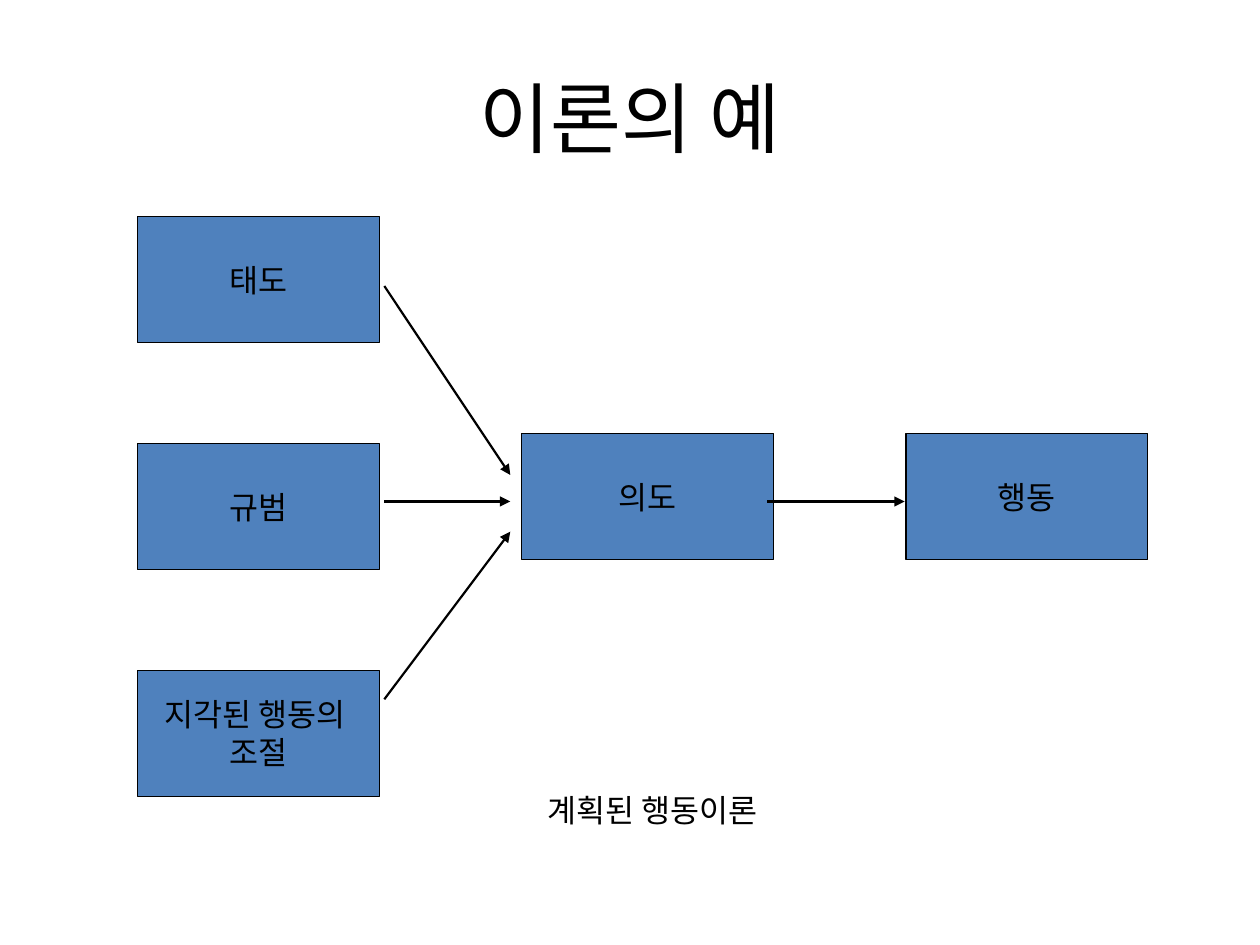
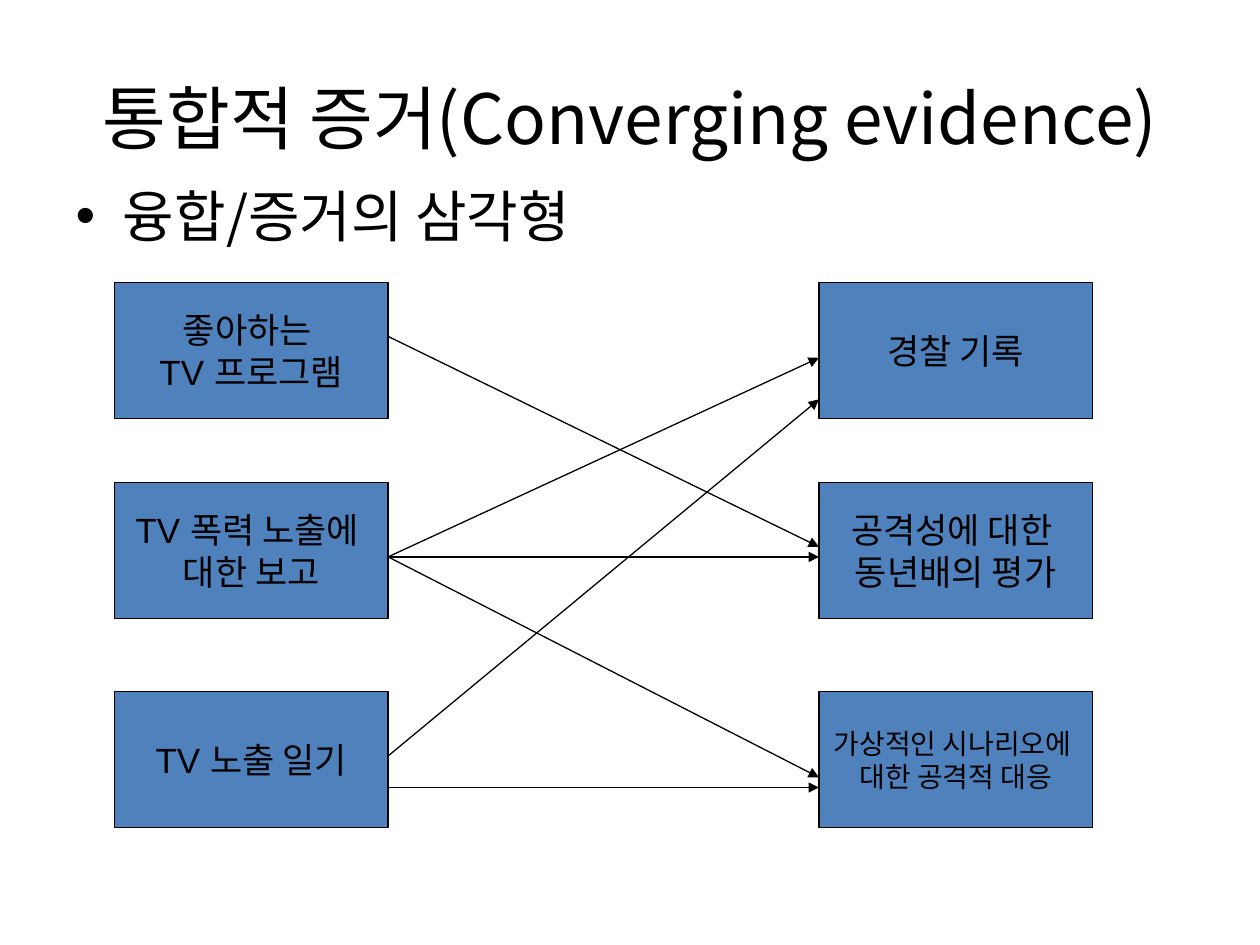
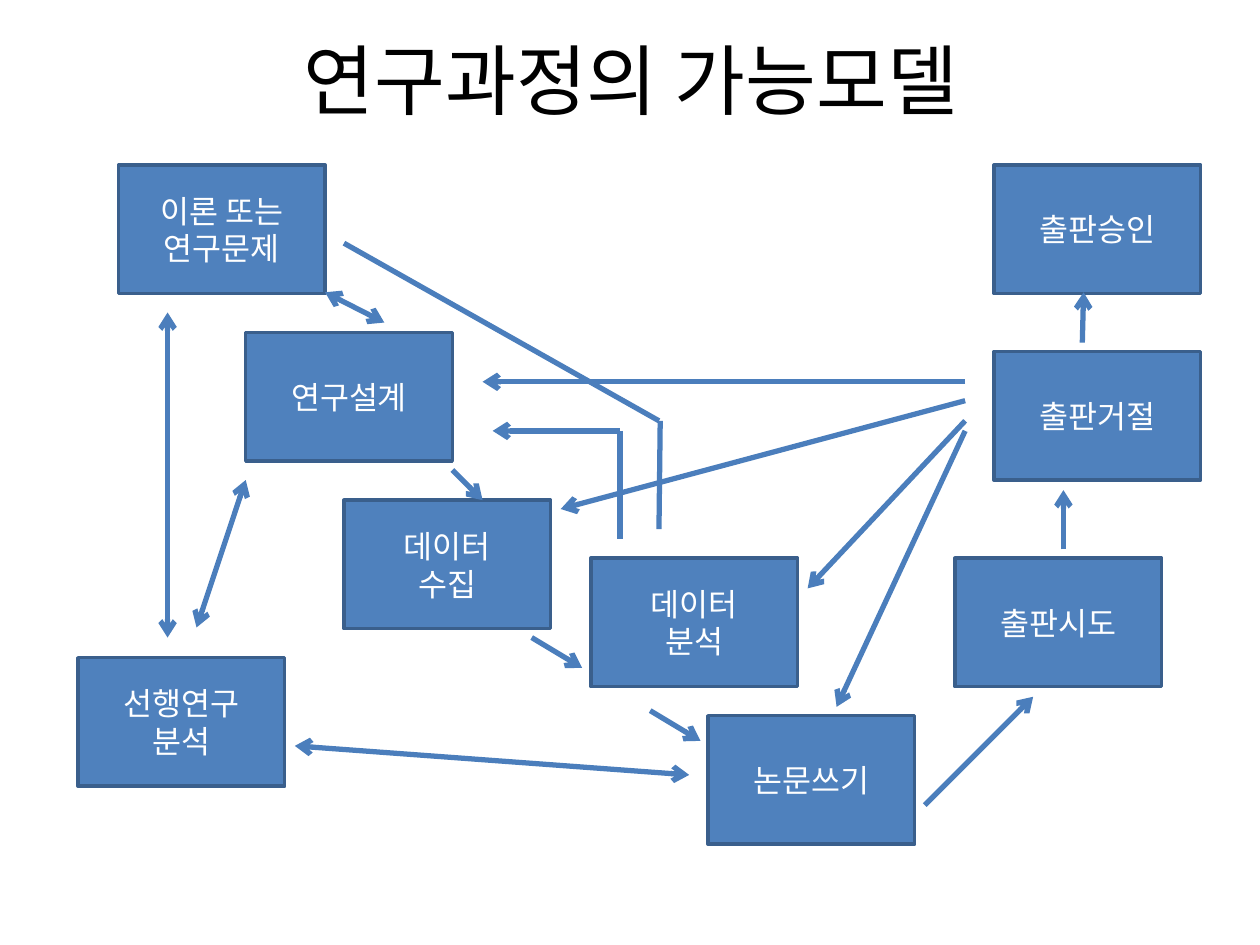
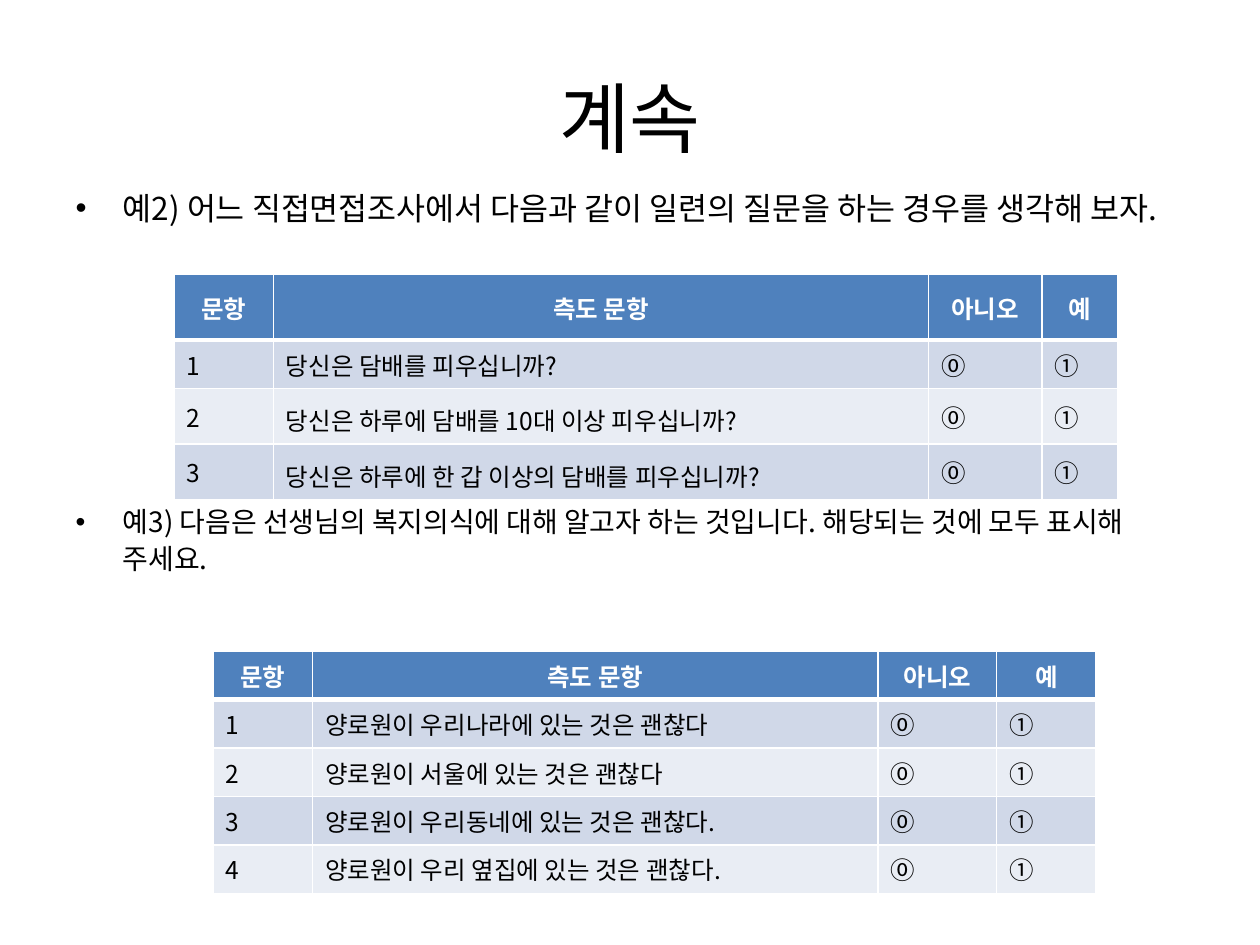
"""Four lecture slides on research theory, evidence, process and scales."""
from lxml import etree
from pptx import Presentation
from pptx.dml.color import RGBColor
from pptx.enum.shapes import MSO_CONNECTOR, MSO_SHAPE
from pptx.enum.text import MSO_ANCHOR, MSO_AUTO_SIZE, PP_ALIGN
from pptx.oxml.ns import qn
from pptx.util import Inches, Pt

CENTER, LEFT = PP_ALIGN.CENTER, PP_ALIGN.LEFT
MIDDLE = MSO_ANCHOR.MIDDLE
RECT, STRAIGHT = MSO_SHAPE.RECTANGLE, MSO_CONNECTOR.STRAIGHT
NO_FIT, GROW = MSO_AUTO_SIZE.NONE, MSO_AUTO_SIZE.SHAPE_TO_FIT_TEXT
TITLE_CONTENT, TITLE_ONLY = 1, 5

FONT = "Noto Sans CJK KR"
COLORS = {
    "black": "000000", "white": "FFFFFF", "blue": "4F81BD",
    "edge": "3A5F8C", "arrow": "4B7EBC", "odd": "D0D8E8", "even": "E9EDF4",
}

THEORY_X, THEORY_W, THEORY_H = 1.09, 1.92, 1
THEORY_CAUSES = ["태도", "규범", "지각된 행동의 \n조절"]
THEORY_TOP, THEORY_STEP = 1.72, 1.8
THEORY_RESULTS = [(4.14, 2, "의도"), (7.19, 1.92, "행동")]
THEORY_RESULT_Y = 3.44
THEORY_ARROWS = [
    (3.05, 5.55, 4.05, 4.22), (3.05, 3.98, 4.05, 3.98),
    (3.05, 2.27, 4.05, 3.77), (6.09, 3.98, 7.18, 3.98),
]

EVIDENCE_W, EVIDENCE_H = 2.17, 1.08
EVIDENCE_LEFT, EVIDENCE_RIGHT = 0.91, 6.5
EVIDENCE_ROWS = [
    (2.24, "좋아하는 \nTV 프로그램", "경찰 기록", 20),
    (3.83, "TV 폭력 노출에 \n대한 보고", "공격성에 대한 \n동년배의 평가", 20),
    (5.49, "TV 노출 일기", "가상적인 시나리오에 \n대한 공격적 대응", 16),
]
EVIDENCE_LINKS = [(4.42, 4.42), (4.42, 2.84), (4.42, 6.17),
                  (2.67, 4.34), (6.25, 6.25), (6, 3.17)]

STEP_W, STEP_H = 1.64, 1.02
STEPS = [
    (0.94, 1.31, "이론 또는 연구문제"), (0.62, 5.22, "선행연구\n분석"),
    (1.95, 2.64, "연구설계"), (2.73, 3.97, "데이터\n수집"),
    (4.69, 4.43, "데이터\n분석"), (5.62, 5.68, "논문쓰기"),
    (7.58, 4.43, "출판시도"), (7.89, 2.79, "출판거절"),
    (7.89, 1.31, "출판승인"),
]
TWO_WAY = [(2.58, 2.32, 3.05, 2.56), (1.33, 2.48, 1.33, 5.06),
           (1.95, 3.81, 1.56, 4.98), (5.47, 6.15, 2.34, 5.92)]
ONE_WAY = [
    (3.59, 3.73, 3.83, 3.97), (4.22, 5.06, 4.62, 5.3),
    (7.66, 3.03, 3.83, 3.03), (7.66, 3.18, 4.45, 4.04),
    (7.66, 3.34, 6.41, 4.67), (7.66, 3.42, 6.64, 5.61),
    (7.34, 6.39, 8.2, 5.53), (8.44, 4.36, 8.44, 3.89),
    (8.59, 2.72, 8.6, 2.32), (4.92, 3.42, 3.91, 3.42),
    (5.16, 5.64, 5.56, 5.88),
]
PLAIN = [(2.73, 1.93, 5.23, 3.34), (5.24, 3.34, 5.23, 4.2),
         (4.92, 3.42, 4.92, 4.28)]

HEADER = ["문항", "측도 문항", "아니오", "예"]
ANSWERS = ["⓪", "①"]
EXAMPLES = [
    ("예2) 어느 직접면접조사에서 다음과 같이 일련의 질문을 하는 경우를 생각해 보자.",
     18, 1.2, None),
    ("예3) 다음은 선생님의 복지의식에 대해 알고자 하는 것입니다. "
     "해당되는 것에 모두 표시해 주세요.", 16, 1.1, 157),
]
SCALES = [
    {"at": (1.38, 2.18), "cols": [0.79, 5.2, 0.9, 0.6],
     "rows": [0.52, 0.3, 0.34, 0.34], "spacing": [1, 1.2, 1.2],
     "questions": ["당신은 담배를 피우십니까?",
                   "당신은 하루에 담배를 10대 이상 피우십니까?",
                   "당신은 하루에 한 갑 이상의 담배를 피우십니까?"]},
    {"at": (1.69, 5.17), "cols": [0.79, 4.49, 0.94, 0.79],
     "rows": [0.36] * 5, "spacing": [1] * 4,
     "questions": ["양로원이 우리나라에 있는 것은 괜찮다",
                   "양로원이 서울에 있는 것은 괜찮다",
                   "양로원이 우리동네에 있는 것은 괜찮다.",
                   "양로원이 우리 옆집에 있는 것은 괜찮다."]},
]


def rgb(name):
    return RGBColor.from_string(COLORS[name])


def format_paragraph(p, size, color="black", align=LEFT, font=FONT, bold=False):
    p.alignment = align
    for r in p.runs:
        r.font.size, r.font.name, r.font.bold = Pt(size), font, bold
        r.font.color.rgb = rgb(color)
        r.font._element.find(qn("a:latin")).addnext(
            r.font._element.makeelement(qn("a:ea"), {"typeface": FONT}))


def write(tf, text, size, **style):
    tf.text = text
    for p in tf.paragraphs:
        format_paragraph(p, size, **style)


def add_slide(prs, title, layout=TITLE_ONLY, at=(0.5, 0.3), size=44):
    s = prs.slides.add_slide(prs.slide_layouts[layout])
    sp = s.shapes.title
    sp.left, sp.top, sp.width, sp.height = map(Inches, (*at, 9, 1.25))
    tf = sp.text_frame
    tf.auto_size, tf.vertical_anchor = NO_FIT, MIDDLE
    write(tf, title, size, align=CENTER)
    return s


def fill_body(s, height, text):
    sp = s.placeholders[1]
    sp.left, sp.top, sp.width, sp.height = map(Inches, (0.5, 1.39, 9, height))
    tf = sp.text_frame
    tf.auto_size = NO_FIT
    write(tf, text, 32)
    return tf


def add_box(s, x, y, w, h, text, size=18, color="black", edge="black",
            width=0.75, font=FONT, wrap=False):
    sp = s.shapes.add_shape(RECT, *map(Inches, (x, y, w, h)))
    sp.shadow.inherit = False
    sp.fill.solid()
    sp.fill.fore_color.rgb = rgb("blue")
    sp.line.color.rgb, sp.line.width = rgb(edge), Pt(width)
    tf = sp.text_frame
    tf.word_wrap, tf.vertical_anchor = wrap, MIDDLE
    write(tf, text, size, color=color, align=CENTER, font=font)


def add_line(s, points, color, width, tail=None, head=None):
    c = s.shapes.add_connector(STRAIGHT, *map(Inches, points))
    c.line.color.rgb, c.line.width = rgb(color), Pt(width)
    ln = c.line._get_or_add_ln()
    for tag, kind in (("a:headEnd", head), ("a:tailEnd", tail)):
        if kind:
            etree.SubElement(ln, qn(tag), type=kind)
    etree.SubElement(c._element.spPr, qn("a:effectLst"))


def format_cell(cell, text, fill, spacing=1, header=False):
    cell.fill.solid()
    cell.fill.fore_color.rgb = rgb(fill)
    cell.vertical_anchor = MIDDLE
    write(cell.text_frame, text, 14, color="white" if header else "black",
          align=CENTER if header else LEFT, bold=header)
    cell.text_frame.paragraphs[0].line_spacing = spacing
    tc_pr = cell._tc.get_or_add_tcPr()
    for i, side in enumerate(("lnL", "lnR", "lnT", "lnB")):
        width = Pt(3 if header and side == "lnB" else 1)
        ln = tc_pr.makeelement(qn("a:" + side), {"w": str(width)})
        solid = etree.SubElement(ln, qn("a:solidFill"))
        etree.SubElement(solid, qn("a:srgbClr"), val=COLORS["white"])
        tc_pr.insert(i, ln)


def add_scale(s, scale):
    cols, rows = scale["cols"], scale["rows"]
    size = map(Inches, (*scale["at"], sum(cols), sum(rows)))
    table = s.shapes.add_table(len(rows), len(cols), *size).table
    for column, width in zip(table.columns, cols):
        column.width = Inches(width)
    for row, height in zip(table.rows, rows):
        row.height = Inches(height)
    for j, text in enumerate(HEADER):
        format_cell(table.cell(0, j), text, "blue", header=True)
    for i, question in enumerate(scale["questions"], 1):
        for j, text in enumerate([str(i), question, *ANSWERS]):
            format_cell(table.cell(i, j), text, "odd" if i % 2 else "even",
                        scale["spacing"][i - 1] if j == 1 else 1)


def theory_slide(prs):
    s = add_slide(prs, "이론의 예")
    for x, w, text in THEORY_RESULTS:
        add_box(s, x, THEORY_RESULT_Y, w, THEORY_H, text)
    for i, text in enumerate(THEORY_CAUSES):
        add_box(s, THEORY_X, THEORY_TOP + i * THEORY_STEP, THEORY_W, THEORY_H, text)
    for points in THEORY_ARROWS:
        add_line(s, points, "black", 1.25, "triangle")
    caption = s.shapes.add_textbox(*map(Inches, (4.25, 6.23, 2.57, 0.5)))
    caption.text_frame.word_wrap = False
    caption.text_frame.auto_size = GROW
    write(caption.text_frame, "계획된 행동이론", 18)


def evidence_slide(prs):
    s = add_slide(prs, "통합적 증거(Converging evidence)", TITLE_CONTENT, size=39.6)
    fill_body(s, 5.48, "융합/증거의 삼각형")
    for y, exposure, measure, size in EVIDENCE_ROWS:
        add_box(s, EVIDENCE_LEFT, y, EVIDENCE_W, EVIDENCE_H, exposure, 20, font="Arial")
        add_box(s, EVIDENCE_RIGHT, y, EVIDENCE_W, EVIDENCE_H, measure, size, font="Arial")
    for start, end in EVIDENCE_LINKS:
        points = (EVIDENCE_LEFT + EVIDENCE_W, start, EVIDENCE_RIGHT, end)
        add_line(s, points, "black", 0.75, "triangle")


def process_slide(prs):
    s = add_slide(prs, "연구과정의 가능모델", at=(0.51, 0))
    for x, y, text in STEPS:
        add_box(s, x, y, STEP_W, STEP_H, text, color="white", edge="edge",
                width=2, wrap=True)
    for lines, ends in ((TWO_WAY, ("arrow", "arrow")), (ONE_WAY, ("arrow",)), (PLAIN, ())):
        for points in lines:
            add_line(s, points, "arrow", 3, *ends)


def scale_slide(prs):
    s = add_slide(prs, "계속", TITLE_CONTENT)
    tf = fill_body(s, 5.31, "\n".join(text for text, *_ in EXAMPLES))
    for p, (_, size, spacing, before) in zip(tf.paragraphs, EXAMPLES):
        p.line_spacing = spacing
        if before:
            p.space_before = Pt(before)
        for r in p.runs:
            r.font.size = Pt(size)
    for scale in SCALES:
        add_scale(s, scale)


def main():
    prs = Presentation()
    prs.slide_width, prs.slide_height = Inches(10), Inches(7.5)
    for build in (theory_slide, evidence_slide, process_slide, scale_slide):
        build(prs)
    prs.save("out.pptx")


if __name__ == "__main__":
    main()
